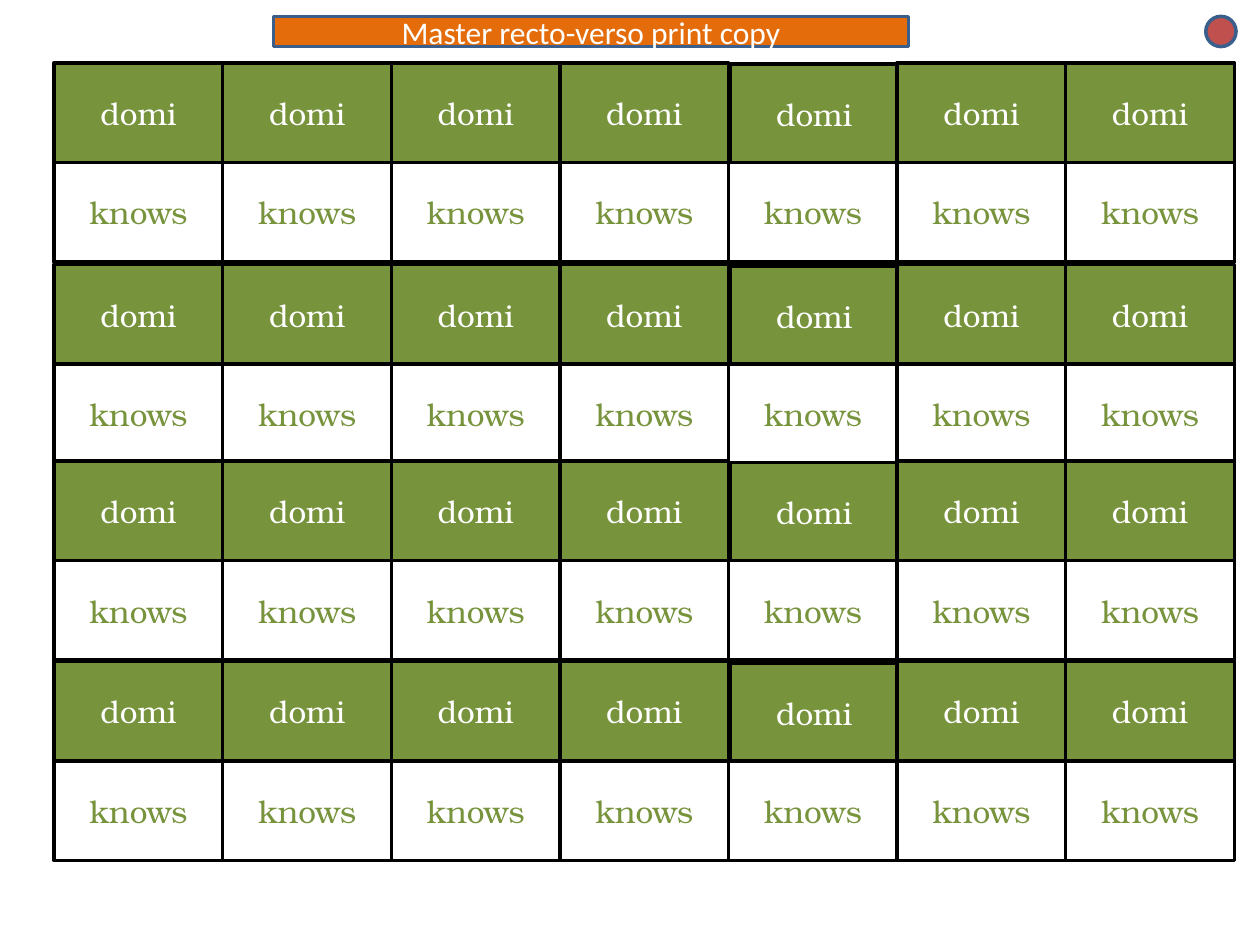
import pptx
import pptx.dml.color
import pptx.enum.shapes
import pptx.enum.text
import pptx.util

Inches = pptx.util.Inches
RGBColor = pptx.dml.color.RGBColor
MSO_SHAPE = pptx.enum.shapes.MSO_SHAPE

GREEN = RGBColor(0x77, 0x93, 0x3C)
WHITE = RGBColor(0xFF, 0xFF, 0xFF)
BLACK = RGBColor(0x00, 0x00, 0x00)
ORANGE = RGBColor(0xE4, 0x6C, 0x0A)
RED = RGBColor(0xC0, 0x50, 0x4D)
BLUE = RGBColor(0x3A, 0x5F, 0x8C)

COLUMNS = 7
RAISED_COLUMN = 4
GRID_LEFT = 0.43
COLUMN_PITCH = 1.338
CARD_WIDTH = 1.34
CARD_HEIGHT = 0.79


def write_text(shape, text, font="TeX Gyre Bonum", size=18, color=WHITE):
    frame = shape.text_frame
    frame.word_wrap = True
    frame.auto_size = pptx.enum.text.MSO_AUTO_SIZE.NONE
    frame.vertical_anchor = pptx.enum.text.MSO_ANCHOR.MIDDLE
    paragraph = frame.paragraphs[0]
    paragraph.alignment = pptx.enum.text.PP_ALIGN.CENTER
    run = paragraph.add_run()
    run.text = text
    run.font.name = font
    run.font.size = pptx.util.Pt(size)
    run.font.color.rgb = color


def paint(shape, fill, outline):
    shape.fill.solid()
    shape.fill.fore_color.rgb = fill
    shape.line.color.rgb = outline
    shape.line.width = pptx.util.Pt(2)


def add_figure(slide, kind, left, top, width, height, fill, outline):
    figure = slide.shapes.add_shape(
        kind, Inches(left), Inches(top), Inches(width), Inches(height))
    figure.shadow.inherit = False
    paint(figure, fill, outline)
    return figure


def add_card(slide, text, left, top, fill, color):
    card = add_figure(slide, MSO_SHAPE.RECTANGLE, left, top,
                      CARD_WIDTH, CARD_HEIGHT, fill, BLACK)
    write_text(card, text, color=color)


def add_domino_row(slide, top):
    for column in range(COLUMNS):
        left = GRID_LEFT + column * COLUMN_PITCH
        drop = 0.01 if column == RAISED_COLUMN else 0
        add_card(slide, "domi", left + drop, top + drop, GREEN, WHITE)
        add_card(slide, "knows", left, top + CARD_HEIGHT, WHITE, GREEN)


def add_banner(slide, text):
    banner = slide.shapes.title
    banner.left, banner.top = Inches(2.17), Inches(0.13)
    banner.width, banner.height = Inches(5.04), Inches(0.24)
    paint(banner, ORANGE, BLUE)
    write_text(banner, text, font="Calibri")


def main():
    presentation = pptx.Presentation()
    presentation.slide_width = Inches(10)
    presentation.slide_height = Inches(7.5)
    slide = presentation.slides.add_slide(presentation.slide_layouts[5])
    add_banner(slide, "Master recto-verso print copy")
    for top in (2.1, 5.25):
        add_domino_row(slide, top)
    add_figure(slide, MSO_SHAPE.OVAL, 9.57, 0.13, 0.24, 0.24, RED, BLUE)
    for top in (0.5, 3.66):
        add_domino_row(slide, top)
    presentation.save("out.pptx")


if __name__ == "__main__":
    main()
